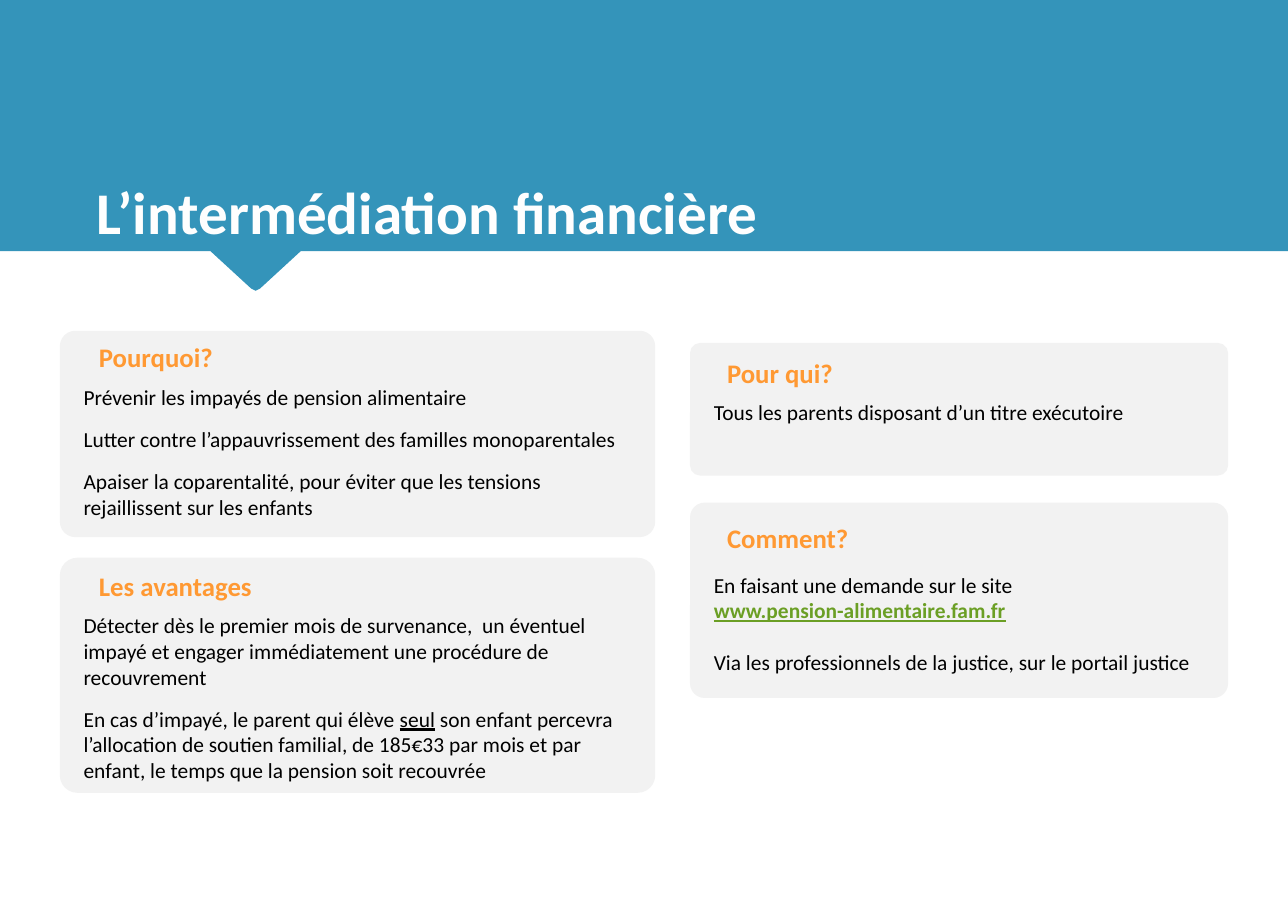
import pptx
import pptx.util
import pptx.dml.color
import pptx.enum.shapes
import pptx.enum.text
from dataclasses import dataclass

Inches = pptx.util.Inches
Pt = pptx.util.Pt
RGB = pptx.dml.color.RGBColor.from_string


@dataclass(frozen=True)
class Theme:
    font: str = "Calibri"
    band: str = "3494BA"
    card: str = "F2F2F2"
    title: str = "FEFEFE"
    heading: str = "FF9933"
    body: str = "000000"
    address: str = "6B9F25"
    title_size: float = 38.6
    heading_size: float = 17.5
    body_size: float = 14


T = Theme()


def write(p, text, size=T.body_size, color=T.body, bold=False, underline=False):
    r = p.add_run()
    r.text = text
    f = r.font
    f.name, f.size, f.bold, f.underline = T.font, Pt(size), bold, underline
    f.color.rgb = RGB(color)


def add_text_box(s, left, top, width, height):
    tf = s.shapes.add_textbox(Inches(left), Inches(top), Inches(width), Inches(height)).text_frame
    tf.word_wrap = True
    return tf


prs = pptx.Presentation()
prs.slide_width, prs.slide_height = Inches(11.69), Inches(8.27)
s = prs.slides.add_slide(prs.slide_layouts[5])

# Title band with its rounded pointer
band_outline = [(0, 0), (0, 2.28), (1.91, 2.28), (2.28, 2.62), (2.3, 2.63), (2.32, 2.64),
                (2.34, 2.63), (2.36, 2.62), (2.73, 2.28), (11.69, 2.28)]
builder = s.shapes.build_freeform(Inches(11.69), 0)
builder.add_line_segments([(Inches(x), Inches(y)) for x, y in band_outline], close=True)
band = builder.convert_to_shape()
band.shadow.inherit = False
band.fill.solid()
band.fill.fore_color.rgb = RGB(T.band)
band.line.fill.background()

title = s.shapes.title
title.element.addprevious(band.element)  # keeps the band behind the title
title.left, title.top, title.width, title.height = map(Inches, (0.78, 1.45, 10.14, 0.93))
tf = title.text_frame
tf.auto_size = pptx.enum.text.MSO_AUTO_SIZE.NONE
tf.vertical_anchor = pptx.enum.text.MSO_ANCHOR.MIDDLE
p = tf.paragraphs[0]
p.alignment = pptx.enum.text.PP_ALIGN.LEFT
write(p, "L’intermédiation financière", size=T.title_size, color=T.title, bold=True)

# Columns: card left and width, heading left and width, body left and width
LEFT = (0.55, 5.39, 0.8, 3.7, 0.66, 5.19)
RIGHT = (6.27, 4.87, 6.5, 3.35, 6.38, 4.65)

# Cards: column, card top and height, heading top, body top and height,
# gap between paragraphs, heading, paragraphs made of (text, format) runs
cards = [
    (LEFT, 3.01, 1.86, 3.04, 3.44, 1.34, 10.7, "Pourquoi?", [
        [("Prévenir les impayés de pension alimentaire", {})],
        [("Lutter contre l’appauvrissement des familles monoparentales", {})],
        [("Apaiser la coparentalité, pour éviter que les tensions rejaillissent sur les enfants", {})],
    ]),
    (RIGHT, 3.12, 1.19, 3.19, 3.57, 0.57, 0, "Pour qui?", [
        [("Tous les parents disposant d’un titre exécutoire", {})],
    ]),
    (RIGHT, 4.57, 1.76, 4.69, 5.14, 1.05, 17.1, "Comment?", [
        [("En faisant une demande sur le site", {}),
         ("\v", {}),
         ("www.pension-alimentaire.fam.fr", dict(color=T.address, bold=True, underline=True))],
        [("Via les professionnels de la justice, sur le portail justice", {})],
    ]),
    (LEFT, 5.07, 2.12, 5.12, 5.51, 1.67, 10.7, "Les avantages", [
        [("Détecter dès le premier mois de survenance,  un éventuel impayé et engager "
          "immédiatement une procédure de recouvrement", {})],
        [("En cas d’impayé, le parent qui élève ", {}),
         ("seul", dict(underline=True)),
         (" son enfant percevra l’allocation de soutien familial, de 185€33 par mois et par "
          "enfant, le temps que la pension soit recouvrée", {})],
    ]),
]

for column, top, height, heading_top, body_top, body_height, gap, heading, paragraphs in cards:
    left, width, heading_left, heading_width, body_left, body_width = column
    sp = s.shapes.add_shape(pptx.enum.shapes.MSO_SHAPE.ROUNDED_RECTANGLE,
                            Inches(left), Inches(top), Inches(width), Inches(height))
    sp.adjustments[0] = 0.072
    sp.shadow.inherit = False
    sp.fill.solid()
    sp.fill.fore_color.rgb = RGB(T.card)
    sp.line.color.rgb = RGB(T.card)
    sp.line.width = Pt(1)

    tf = add_text_box(s, heading_left, heading_top, heading_width, 0.4)
    write(tf.paragraphs[0], heading, size=T.heading_size, color=T.heading, bold=True)

    tf = add_text_box(s, body_left, body_top, body_width, body_height)
    for i, runs in enumerate(paragraphs):
        p = tf.add_paragraph() if i else tf.paragraphs[0]
        p.space_before = Pt(gap if i else 0)
        for text, style in runs:
            if text == "\v":
                p.add_line_break()
            else:
                write(p, text, **style)

prs.save("out.pptx")
